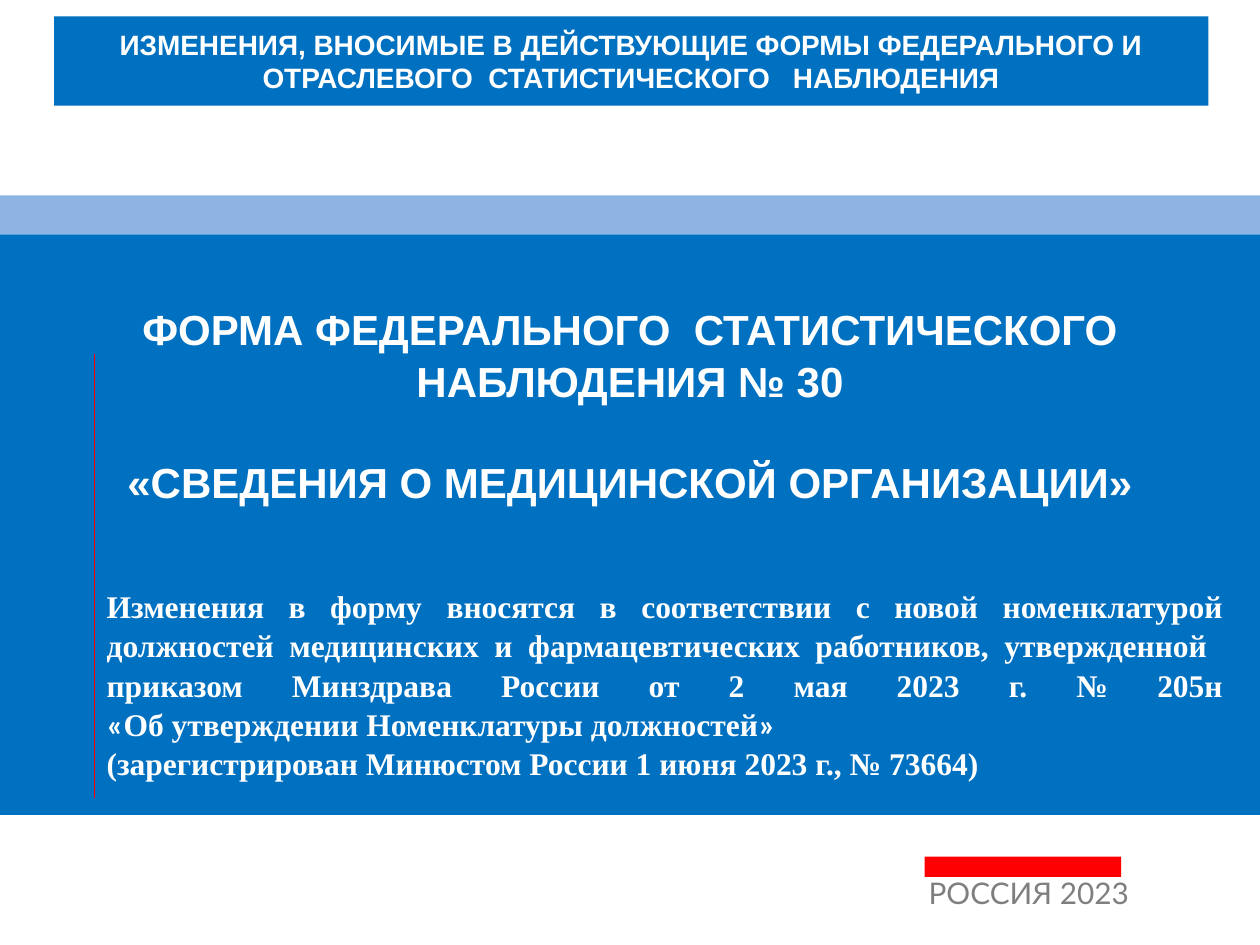
from lxml.etree import SubElement
from pptx import Presentation
from pptx.dml.color import RGBColor
from pptx.enum.shapes import MSO_CONNECTOR, MSO_SHAPE
from pptx.enum.text import MSO_ANCHOR, MSO_AUTO_SIZE, PP_ALIGN
from pptx.oxml.ns import qn
from pptx.util import Cm, Pt

BLUE, LIGHT_BLUE, RED, WHITE, GRAY = "0070C0", "8EB4E3", "FF0000", "FFFFFF", "7F7F7F"
SERIF, SANS = "Times New Roman", "Calibri"


def color(value):
    """Return the colour for a hex string."""
    return RGBColor.from_string(value)


def set_attrs(obj, fmt):
    """Set every attribute named in a dict of format values."""
    for name, value in fmt.items():
        setattr(obj, name, value)


def place(sp, left, top, width, height):
    """Move and size a shape, in centimetres."""
    set_attrs(sp, dict(left=Cm(left), top=Cm(top), width=Cm(width), height=Cm(height)))


def fill(sp, value):
    """Give a shape a solid fill."""
    sp.fill.solid()
    sp.fill.fore_color.rgb = color(value)


def add_bar(s, box, value):
    """Add a plain filled rectangle."""
    sp = s.shapes.add_shape(MSO_SHAPE.RECTANGLE, *map(Cm, box))
    sp.shadow.inherit = False
    sp.line.fill.background()
    fill(sp, value)
    return sp


def add_rule(s, x, top, bottom, value):
    """Add a thin vertical line."""
    cn = s.shapes.add_connector(MSO_CONNECTOR.STRAIGHT, Cm(x), Cm(top), Cm(x), Cm(bottom))
    cn.line.color.rgb = color(value)
    cn.line.width = Pt(0.75)
    SubElement(cn._element.spPr, qn("a:effectLst"))


def add_run(p, text, value, font):
    """Add a run in one font and colour."""
    r = p.add_run()
    r.text = text
    set_attrs(r.font, font)
    r.font.color.rgb = color(value)


def format_frame(tf, **fmt):
    """Wrap a text frame without resizing and apply format values."""
    set_attrs(tf, dict(word_wrap=True, auto_size=MSO_AUTO_SIZE.NONE) | fmt)


def add_text(tf, text, value, font, **fmt):
    """Fill the first paragraph of a text frame."""
    p = tf.paragraphs[0]
    set_attrs(p, fmt)
    add_run(p, text, value, font)


def add_title(s):
    """Fill the title placeholder as the main blue panel."""
    sp = s.shapes.title
    place(sp, 0, 4.72, 25.4, 11.71)
    fill(sp, BLUE)
    tf = sp.text_frame
    format_frame(tf, vertical_anchor=MSO_ANCHOR.TOP, margin_top=Cm(1.35))
    font = dict(name="Arial", size=Pt(24), bold=True)
    fmt = dict(alignment=PP_ALIGN.CENTER, line_spacing=1.04)
    add_text(tf, "ФОРМА ФЕДЕРАЛЬНОГО  СТАТИСТИЧЕСКОГО НАБЛЮДЕНИЯ № 30", WHITE, font, **fmt)
    p = tf.add_paragraph()
    set_attrs(p, fmt | dict(space_before=Pt(28)))
    add_run(p, "«СВЕДЕНИЯ О МЕДИЦИНСКОЙ ОРГАНИЗАЦИИ»", WHITE, font)


def add_header(s):
    """Add the blue heading bar at the top."""
    tf = add_bar(s, (1.09, 0.33, 23.27, 1.8), BLUE).text_frame
    format_frame(tf, vertical_anchor=MSO_ANCHOR.MIDDLE)
    add_text(tf, "ИЗМЕНЕНИЯ, ВНОСИМЫЕ В ДЕЙСТВУЮЩИЕ ФОРМЫ ФЕДЕРАЛЬНОГО И "
             "ОТРАСЛЕВОГО  СТАТИСТИЧЕСКОГО   НАБЛЮДЕНИЯ", WHITE,
             dict(name="Arial", size=Pt(16), bold=True), alignment=PP_ALIGN.CENTER)


def add_label(s):
    """Add the country and year label."""
    tf = s.shapes.add_textbox(Cm(18.47), Cm(17.65), Cm(4.78), Cm(1.19)).text_frame
    format_frame(tf)
    add_text(tf, "РОССИЯ 2023", GRAY, dict(name="Lato", size=Pt(17)), line_spacing=0.8)


def add_basis(s):
    """Add the justified text on the legal basis of the changes."""
    tf = s.shapes.add_textbox(Cm(1.9), Cm(11.73), Cm(23.01), Cm(4.11)).text_frame
    format_frame(tf, vertical_anchor=MSO_ANCHOR.MIDDLE)
    font = dict(name=SERIF, size=Pt(18), bold=True)
    fmt = dict(alignment=PP_ALIGN.JUSTIFY, line_spacing=1.04)
    add_text(tf, "Изменения в форму вносятся в соответствии с новой номенклатурой "
             "должностей медицинских и фармацевтических работников, утвержденной  "
             "приказом Минздрава России от 2 мая 2023 г. № 205н", WHITE, font, **fmt)
    p = tf.paragraphs[0]
    p.add_line_break()
    for text, name in (("«", SANS), ("Об утверждении Номенклатуры должностей", SERIF), ("»", SANS)):
        add_run(p, text, WHITE, font | dict(name=name))
    p = tf.add_paragraph()
    set_attrs(p, fmt)
    add_run(p, "(зарегистрирован Минюстом России 1 июня 2023 г., № 73664)", WHITE, font)


def main():
    """Build the slide and save it."""
    prs = Presentation()
    set_attrs(prs, dict(slide_width=Cm(25.4), slide_height=Cm(19.05)))
    s = prs.slides.add_slide(prs.slide_layouts[5])
    add_title(s)
    add_bar(s, (0, 3.94, 25.4, 0.79), LIGHT_BLUE)
    add_label(s)
    add_bar(s, (18.64, 17.27, 3.96, 0.41), RED)
    add_rule(s, 1.9, 7.14, 16.08, RED)
    add_header(s)
    add_basis(s)
    prs.save("out.pptx")


if __name__ == "__main__":
    main()
